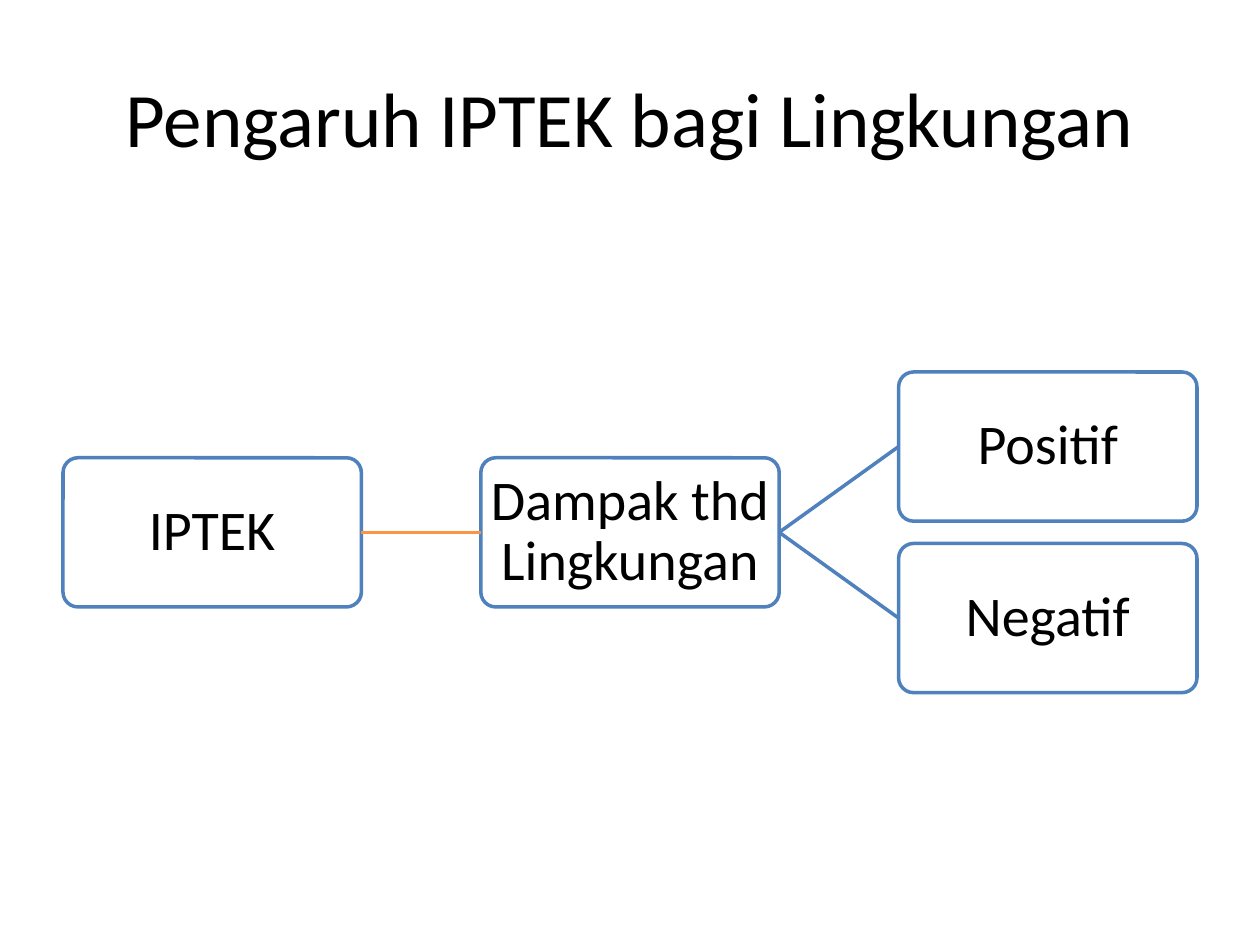
from lxml import etree
from pptx import Presentation
from pptx.dml.color import RGBColor
from pptx.enum import shapes, text
from pptx.oxml.ns import qn
from pptx.util import Pt

BLACK = RGBColor(0x00, 0x00, 0x00)
WHITE = RGBColor(0xFF, 0xFF, 0xFF)
BLUE = RGBColor(0x4F, 0x81, 0xBD)
ORANGE = RGBColor(0xF7, 0x96, 0x46)
FONT = "Calibri"


def write_centred(shape, wording, size, line_spacing=1.0):
    frame = shape.text_frame
    frame.word_wrap = True
    frame.vertical_anchor = text.MSO_ANCHOR.MIDDLE
    paragraph = frame.paragraphs[0]
    paragraph.alignment = text.PP_ALIGN.CENTER
    paragraph.line_spacing = line_spacing
    run = paragraph.add_run()
    run.text = wording
    run.font.name = FONT
    run.font.size = Pt(size)
    run.font.color.rgb = BLACK


def add_title(slide, left, top, width, height, wording):
    box = slide.shapes.add_textbox(Pt(left), Pt(top), Pt(width), Pt(height))
    write_centred(box, wording, 44)


def add_node(slide, left, top, width, height, wording):
    node = slide.shapes.add_shape(
        shapes.MSO_SHAPE.ROUNDED_RECTANGLE, Pt(left), Pt(top), Pt(width), Pt(height))
    node.adjustments[0] = 0.1
    node.shadow.inherit = False
    node.fill.solid()
    node.fill.fore_color.rgb = WHITE
    node.line.color.rgb = BLUE
    node.line.width = Pt(2)
    frame = node.text_frame
    frame.margin_left = frame.margin_right = Pt(1.6)
    frame.margin_top = frame.margin_bottom = Pt(1.6)
    write_centred(node, wording, 32, 0.9)
    return node


def add_branch(slide, parent, child, color):
    """Join the right side of parent to the left side of child."""
    branch = slide.shapes.add_connector(shapes.MSO_CONNECTOR.STRAIGHT, 0, 0, 0, 0)
    branch.begin_connect(parent, 3)
    branch.end_connect(child, 1)
    branch.line.color.rgb = color
    branch.line.width = Pt(2)
    etree.SubElement(branch._element.spPr, qn("a:effectLst"))


def add_tree(slide, left, top, width, height, root, middle, leaves):
    """Draw a left-to-right tree, centred vertically in its box."""
    node_width, node_height, row_step = 170.5, 85.25, 98
    column_step = (width - node_width) / 2
    middle_top = top + (height - node_height) / 2

    def place(column, row, wording):
        return add_node(slide, left + column * column_step,
                        middle_top + row * row_step, node_width, node_height, wording)

    root_node = place(0, 0, root)
    middle_node = place(1, 0, middle)
    add_branch(slide, root_node, middle_node, ORANGE)
    for index, leaf in enumerate(leaves):
        leaf_node = place(2, index - (len(leaves) - 1) / 2, leaf)
        add_branch(slide, middle_node, leaf_node, BLUE)


def main():
    presentation = Presentation()
    presentation.slide_width, presentation.slide_height = Pt(720), Pt(540)
    slide = presentation.slides.add_slide(presentation.slide_layouts[6])
    add_title(slide, 36, 21.6, 648, 90, "Pengaruh IPTEK bagi Lingkungan")
    add_tree(slide, 36, 126, 648, 356.4,
             "IPTEK", "Dampak thd Lingkungan", ["Positif", "Negatif"])
    presentation.save("out.pptx")


if __name__ == "__main__":
    main()
